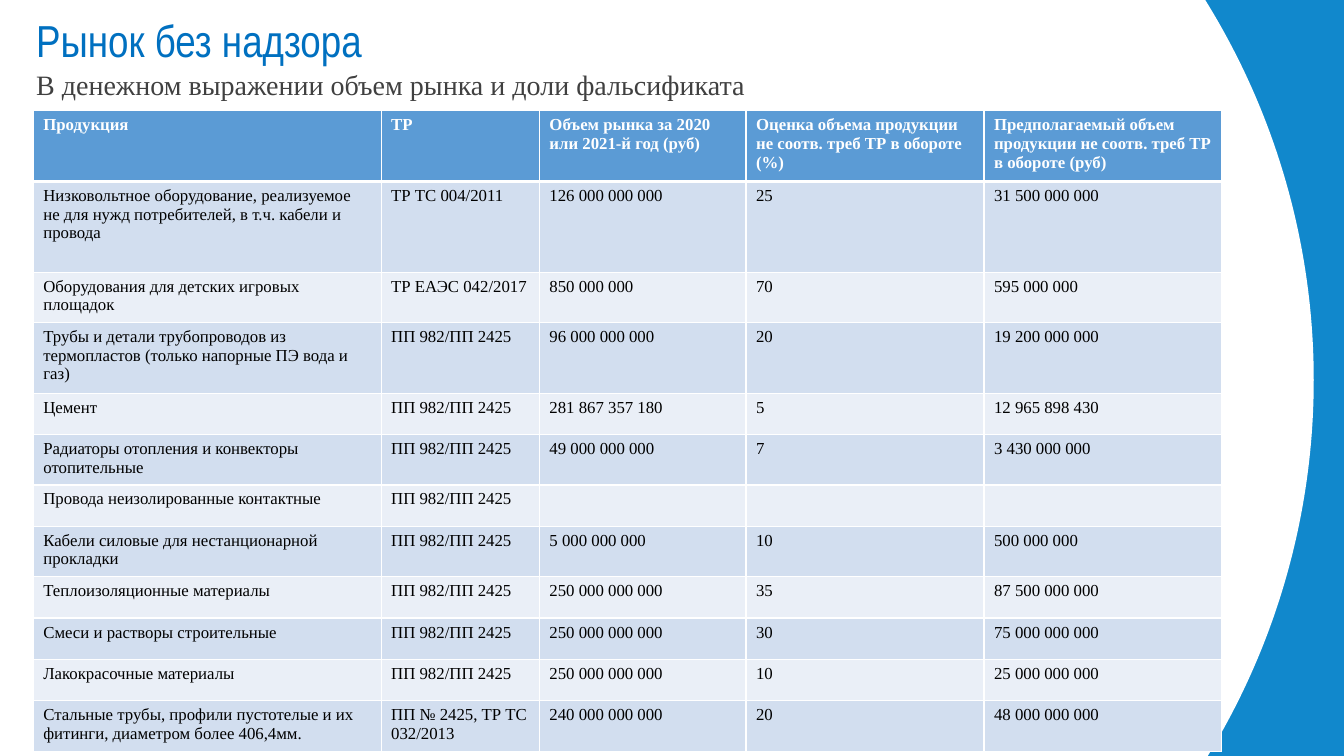
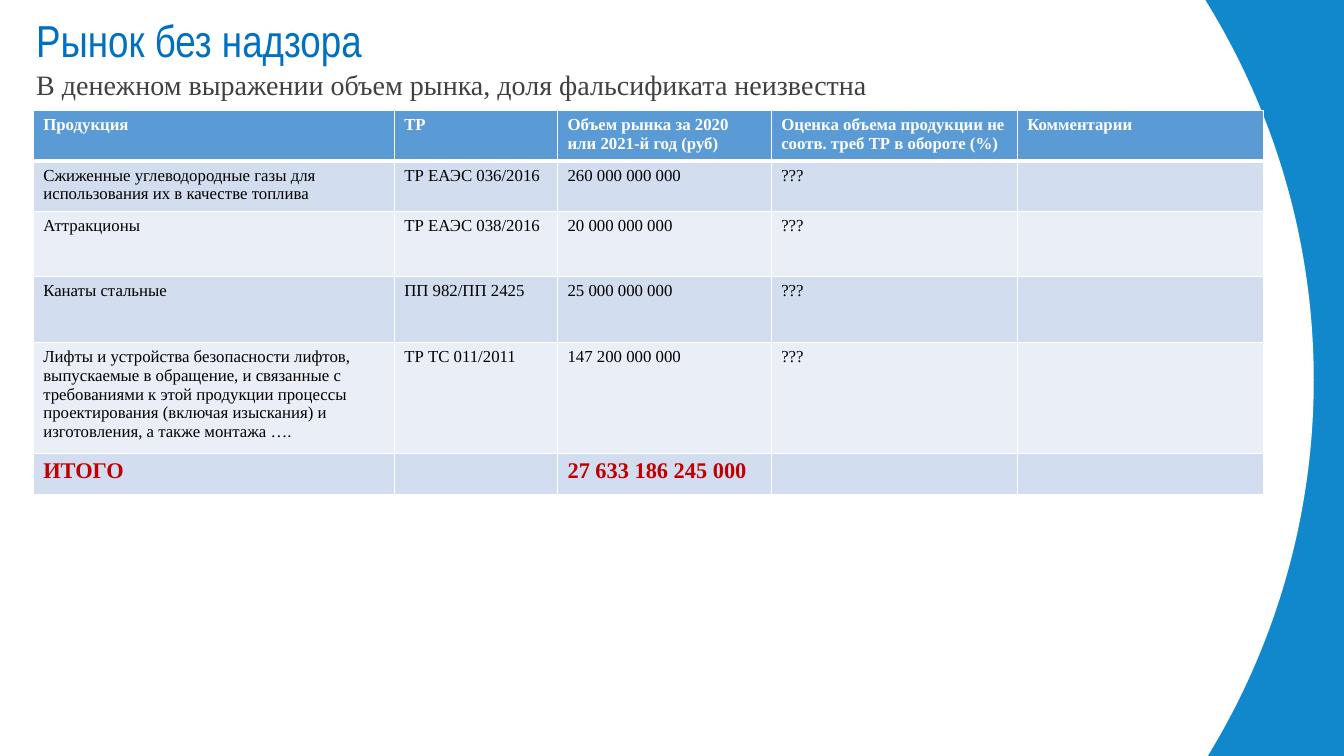
from dataclasses import dataclass

from lxml import etree
from pptx import Presentation
from pptx.dml.color import RGBColor
from pptx.enum.shapes import MSO_SHAPE
from pptx.enum.text import MSO_AUTO_SIZE
from pptx.oxml.ns import qn
from pptx.slide import Slide
from pptx.table import _Cell
from pptx.text.text import TextFrame
from pptx.util import Inches, Pt

ELLIPSE = MSO_SHAPE.OVAL
GROW = MSO_AUTO_SIZE.SHAPE_TO_FIT_TEXT

BLUE, WHITE, BLACK = "1188CC", "FFFFFF", "000000"
TITLE_BLUE, GREY, RED = "0070C0", "404040", "C00000"
HEADER_FILL = "5B9BD5"
BAND_FILLS = ("D2DEEF", "EAEFF7")
THIN, THICK = 1, 3
ROW_HEIGHT = 0.41
DECREE = "ПП 982/ПП 2425"
UNKNOWN = "???"


@dataclass(frozen=True)
class TextStyle:
    size: int
    color: str
    font: str = "Times New Roman"
    bold: bool = False


TITLE = TextStyle(32, TITLE_BLUE, "Arial Narrow")
SUBTITLE = TextStyle(20, GREY)
HEADER = TextStyle(12, WHITE, bold=True)
BODY = TextStyle(12, BLACK)
TOTAL = TextStyle(16, RED, bold=True)


@dataclass(frozen=True)
class MarketSlide:
    """Row heights hold only the rows that differ from ROW_HEIGHT."""
    subtitle: str
    widths: tuple[float, ...]
    rows: tuple[tuple[str, ...], ...]
    heights: dict[int, float]
    has_total: bool = False


HEADINGS = (
    "Продукция",
    "ТР",
    "Объем рынка за 2020 или 2021-й год (руб)",
    "Оценка объема продукции не соотв. треб ТР в обороте (%)",
)

SLIDES = (
    MarketSlide(
        "В денежном выражении объем рынка и доли фальсификата",
        (3.45, 1.57, 2.05, 2.36, 2.36),
        (
            (*HEADINGS, "Предполагаемый объем продукции не соотв. треб ТР в обороте (руб)"),
            ("Низковольтное оборудование, реализуемое не для нужд потребителей, "
             "в т.ч. кабели и провода",
             "ТР ТС 004/2011", "126 000 000 000", "25", "31 500 000 000"),
            ("Оборудования для детских игровых площадок",
             "ТР ЕАЭС 042/2017", "850 000 000", "70", "595 000 000"),
            ("Трубы и детали трубопроводов из термопластов "
             "(только напорные ПЭ вода и газ)",
             DECREE, "96 000 000 000", "20", "19 200 000 000"),
            ("Цемент", DECREE, "281 867 357 180", "5", "12 965 898 430"),
            ("Радиаторы отопления и конвекторы отопительные",
             DECREE, "49 000 000 000", "7", "3 430 000 000"),
            ("Провода неизолированные контактные", DECREE, "", "", ""),
            ("Кабели силовые для нестанционарной прокладки",
             DECREE, "5 000 000 000", "10", "500 000 000"),
            ("Теплоизоляционные материалы",
             DECREE, "250 000 000 000", "35", "87 500 000 000"),
            ("Смеси и растворы строительные",
             DECREE, "250 000 000 000", "30", "75 000 000 000"),
            ("Лакокрасочные материалы",
             DECREE, "250 000 000 000", "10", "25 000 000 000"),
            ("Стальные трубы, профили пустотелые и их фитинги, "
             "диаметром более 406,4мм.",
             "ПП № 2425, ТР ТС 032/2013", "240 000 000 000", "20", "48 000 000 000"),
        ),
        {0: 0.7, 1: 0.9, 2: 0.5, 3: 0.7, 5: 0.5, 7: 0.5, 11: 0.5},
    ),
    MarketSlide(
        "В денежном выражении объем рынка, доля фальсификата неизвестна",
        (3.58, 1.62, 2.12, 2.44, 2.44),
        (
            (*HEADINGS, "Комментарии"),
            ("Сжиженные углеводородные газы для использования их в качестве топлива",
             "ТР ЕАЭС 036/2016", "260 000 000 000", UNKNOWN, ""),
            ("Аттракционы", "ТР ЕАЭС 038/2016", "20 000 000 000", UNKNOWN, ""),
            ("Канаты стальные", DECREE, "25 000 000 000", UNKNOWN, ""),
            ("Лифты и устройства безопасности лифтов, выпускаемые в обращение, "
             "и связанные с требованиями к этой продукции процессы проектирования "
             "(включая изыскания) и изготовления, а также монтажа ….",
             "ТР ТС 011/2011", "147 200 000 000", UNKNOWN, ""),
            ("ИТОГО", "", "27 633 186 245 000", "", ""),
        ),
        {0: 0.5, 1: 0.5, 2: 0.64, 3: 0.66, 4: 1.09},
        has_total=True,
    ),
)


def rgb(color: str) -> RGBColor:
    return RGBColor.from_string(color)


def write(tf: TextFrame, text: str, style: TextStyle) -> None:
    p = tf.paragraphs[0]
    if not text:
        p.font.size = Pt(style.size)
        return
    r = p.add_run()
    r.text = text
    r.font.name = style.font
    r.font.size = Pt(style.size)
    r.font.bold = style.bold
    r.font.color.rgb = rgb(style.color)


def add_backdrop(slide: Slide) -> None:
    """Blue background, covered by a large white disc."""
    fill = slide.background.fill
    fill.solid()
    fill.fore_color.rgb = rgb(BLUE)
    sp = slide.shapes.add_shape(
        ELLIPSE, Inches(-1.25), Inches(-3.37), Inches(14.28), Inches(14.28))
    sp.shadow.inherit = False
    sp.fill.solid()
    sp.fill.fore_color.rgb = rgb(WHITE)
    sp.line.fill.background()


def add_heading(slide: Slide, text: str, top: float, height: float,
                style: TextStyle) -> None:
    box = slide.shapes.add_textbox(
        Inches(0.26), Inches(top), Inches(11.55), Inches(height))
    tf = box.text_frame
    tf.word_wrap = True
    tf.auto_size = GROW
    write(tf, text, style)


def set_borders(cell: _Cell, top: int, bottom: int) -> None:
    """Draw white cell borders; widths are in points."""
    tc_pr = cell._tc.get_or_add_tcPr()
    widths = {"a:lnL": THIN, "a:lnR": THIN, "a:lnT": top, "a:lnB": bottom}
    for tag, width in widths.items():
        ln = etree.SubElement(tc_pr, qn(tag), w=str(Pt(width)))
        fill = etree.SubElement(ln, qn("a:solidFill"))
        etree.SubElement(fill, qn("a:srgbClr"), val=WHITE)


def add_market_table(slide: Slide, market: MarketSlide) -> None:
    heights = [market.heights.get(i, ROW_HEIGHT) for i in range(len(market.rows))]
    table = slide.shapes.add_table(
        len(market.rows), len(market.widths), Inches(0.33), Inches(1.1),
        Inches(sum(market.widths)), Inches(sum(heights))).table
    table.first_row = table.horz_banding = False
    for column, width in zip(table.columns, market.widths):
        column.width = Inches(width)

    last = len(market.rows) - 1
    for i, texts in enumerate(market.rows):
        table.rows[i].height = Inches(heights[i])
        if i == 0:
            style, color = HEADER, HEADER_FILL
        else:
            style = TOTAL if market.has_total and i == last else BODY
            color = BAND_FILLS[(i - 1) % 2]
        for j, text in enumerate(texts):
            cell = table.cell(i, j)
            set_borders(cell, top=THICK if i == 1 else THIN,
                        bottom=THICK if i == 0 else THIN)
            cell.fill.solid()
            cell.fill.fore_color.rgb = rgb(color)
            write(cell.text_frame, text, style)


def main() -> None:
    prs = Presentation()
    prs.slide_width, prs.slide_height = Inches(13.33), Inches(7.5)
    blank = prs.slide_layouts[6]
    for market in SLIDES:
        slide = prs.slides.add_slide(blank)
        add_backdrop(slide)
        add_heading(slide, "Рынок без надзора", 0.08, 0.64, TITLE)
        add_heading(slide, market.subtitle, 0.62, 0.77, SUBTITLE)
        add_market_table(slide, market)
    prs.save("out.pptx")


if __name__ == "__main__":
    main()
